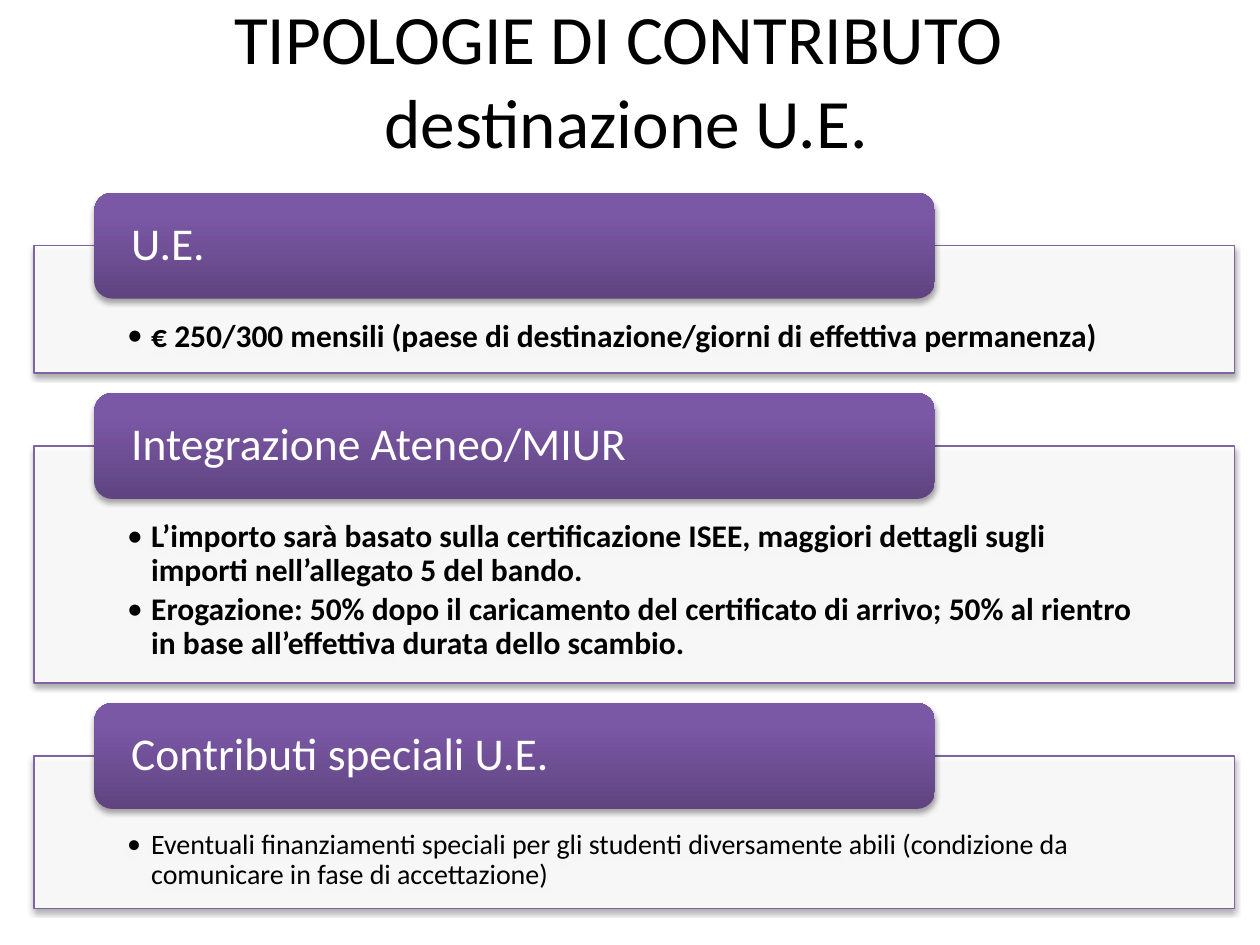
from dataclasses import dataclass

import pptx
import pptx.dml.color
import pptx.enum.shapes
import pptx.enum.text
import pptx.oxml.ns
import pptx.util
from lxml import etree

Inches, Pt = pptx.util.Inches, pptx.util.Pt
RGB = pptx.dml.color.RGBColor.from_string
SHAPE = pptx.enum.shapes.MSO_SHAPE
ALIGN = pptx.enum.text.PP_ALIGN
ANCHOR = pptx.enum.text.MSO_ANCHOR
qn = pptx.oxml.ns.qn


@dataclass(frozen=True)
class Theme:
    font: str = "Calibri"
    black: str = "000000"
    white: str = "FFFFFF"
    border: str = "8064A2"
    gradient: tuple = ((0, "5F4480"), (80, "7B58A6"), (100, "7C57A8"))
    title_size: float = 39.6
    header_size: float = 26
    body_size: float = 18
    note_size: float = 16


@dataclass(frozen=True)
class Section:
    header: str
    items: tuple[str, ...]
    height: float
    size: float
    bold: bool = True


THEME = Theme()
SECTIONS = (
    Section("U.E.",
            ("€ 250/300 mensili (paese di destinazione/giorni di effettiva permanenza)",),
            1.01, THEME.body_size),
    Section("Integrazione Ateneo/MIUR",
            ("L’importo sarà basato sulla certificazione ISEE, maggiori dettagli sugli "
             "importi nell’allegato 5 del bando.",
             "Erogazione: 50% dopo il caricamento del certificato di arrivo; 50% al rientro "
             "in base all’effettiva durata dello scambio."),
            1.88, THEME.body_size),
    Section("Contributi speciali U.E.",
            ("Eventuali finanziamenti speciali per gli studenti diversamente abili "
             "(condizione da comunicare in fase di accettazione)",),
            1.21, THEME.note_size, bold=False),
)

# Vertical rhythm: each header overlaps the top of its panel
FIRST_TOP, OVERLAP, GAP = 1.53, 0.42, 0.16
PANEL_LEFT, PANEL_WIDTH = 0.27, 9.53
HEADER_LEFT, HEADER_WIDTH, HEADER_HEIGHT = 0.75, 6.67, 0.84


def add_color(parent, color: str, alpha: int) -> None:
    clr = etree.SubElement(parent, qn("a:srgbClr"), val=color)
    if alpha < 100:
        etree.SubElement(clr, qn("a:alpha"), val=str(alpha * 1000))


def set_shadow(sp) -> None:
    sp.shadow.inherit = False
    effects = sp._element.spPr.find(qn("a:effectLst"))
    shadow = etree.SubElement(effects, qn("a:outerShdw"), blurRad=str(Pt(3.1)),
                              dist=str(Pt(1.8)), dir="5400000", rotWithShape="0")
    add_color(shadow, THEME.black, 35)


def set_gradient(sp) -> None:
    sp.fill.gradient()
    sp.fill.gradient_angle = 90
    stops = sp._element.spPr.find(qn("a:gradFill")).find(qn("a:gsLst"))
    for stop in list(stops):
        stops.remove(stop)
    for position, color in THEME.gradient:
        stop = etree.SubElement(stops, qn("a:gs"), pos=str(position * 1000))
        add_color(stop, color, 100)


def set_frame(sp, left: float, top: float, right: float, bottom: float, anchor):
    tf = sp.text_frame
    tf.word_wrap = True
    tf.vertical_anchor = anchor
    tf.margin_left, tf.margin_top = Inches(left), Inches(top)
    tf.margin_right, tf.margin_bottom = Inches(right), Inches(bottom)
    return tf


def format_paragraph(p, size: float, color: str, align, bold: bool = False) -> None:
    p.alignment = align
    for r in p.runs:
        r.font.name = THEME.font
        r.font.size = Pt(size)
        r.font.bold = bold
        r.font.color.rgb = RGB(color)


def set_bullet(p) -> None:
    pPr = p._p.get_or_add_pPr()
    pPr.set("marL", str(Inches(0.19)))
    pPr.set("indent", str(-Inches(0.19)))
    etree.SubElement(pPr, qn("a:buFont"), typeface=THEME.font)
    etree.SubElement(pPr, qn("a:buChar"), char="•")


def add_panel(shapes, section: Section, top: float) -> None:
    sp = shapes.add_shape(SHAPE.RECTANGLE, Inches(PANEL_LEFT), Inches(top),
                          Inches(PANEL_WIDTH), Inches(section.height))
    sp.fill.solid()
    sp.fill.fore_color.rgb = RGB(THEME.white)
    clr = sp._element.spPr.find(qn("a:solidFill")).find(qn("a:srgbClr"))
    etree.SubElement(clr, qn("a:alpha"), val="90000")
    sp.line.color.rgb = RGB(THEME.border)
    sp.line.width = Pt(0.75)
    set_shadow(sp)
    tf = set_frame(sp, 0.74, 0.59, 0.74, 0.14, ANCHOR.TOP)
    tf.text = "\n".join(section.items)
    for p in tf.paragraphs:
        format_paragraph(p, section.size, THEME.black, ALIGN.LEFT, section.bold)
        p.line_spacing = 0.9
        p.space_after = Pt(0.15 * section.size)
        set_bullet(p)


def add_header(shapes, text: str, top: float) -> None:
    sp = shapes.add_shape(SHAPE.ROUNDED_RECTANGLE, Inches(HEADER_LEFT), Inches(top),
                          Inches(HEADER_WIDTH), Inches(HEADER_HEIGHT))
    set_gradient(sp)
    sp.line.fill.background()
    set_shadow(sp)
    tf = set_frame(sp, 0.25, 0, 0.25, 0, ANCHOR.MIDDLE)
    tf.text = text
    p = tf.paragraphs[0]
    format_paragraph(p, THEME.header_size, THEME.white, ALIGN.LEFT)
    p.line_spacing = 0.9


def add_title(slide) -> None:
    title = slide.shapes.title
    title.left, title.top = Inches(0.47), Inches(0)
    title.width, title.height = Inches(9), Inches(1.25)
    tf = title.text_frame
    tf.text = "TIPOLOGIE DI CONTRIBUTO \vdestinazione U.E."
    tf.auto_size = pptx.enum.text.MSO_AUTO_SIZE.NONE
    tf.vertical_anchor = ANCHOR.MIDDLE
    format_paragraph(tf.paragraphs[0], THEME.title_size, THEME.black, ALIGN.CENTER)


def main() -> None:
    prs = pptx.Presentation()
    prs.slide_width, prs.slide_height = Inches(10), Inches(7.5)
    slide = prs.slides.add_slide(prs.slide_layouts.get_by_name("Title Only"))
    add_title(slide)

    # Stacked sections, each a panel with its header on top
    top = FIRST_TOP
    for section in SECTIONS:
        add_panel(slide.shapes, section, top + OVERLAP)
        add_header(slide.shapes, section.header, top)
        top += OVERLAP + section.height + GAP

    prs.save("out.pptx")


if __name__ == "__main__":
    main()
